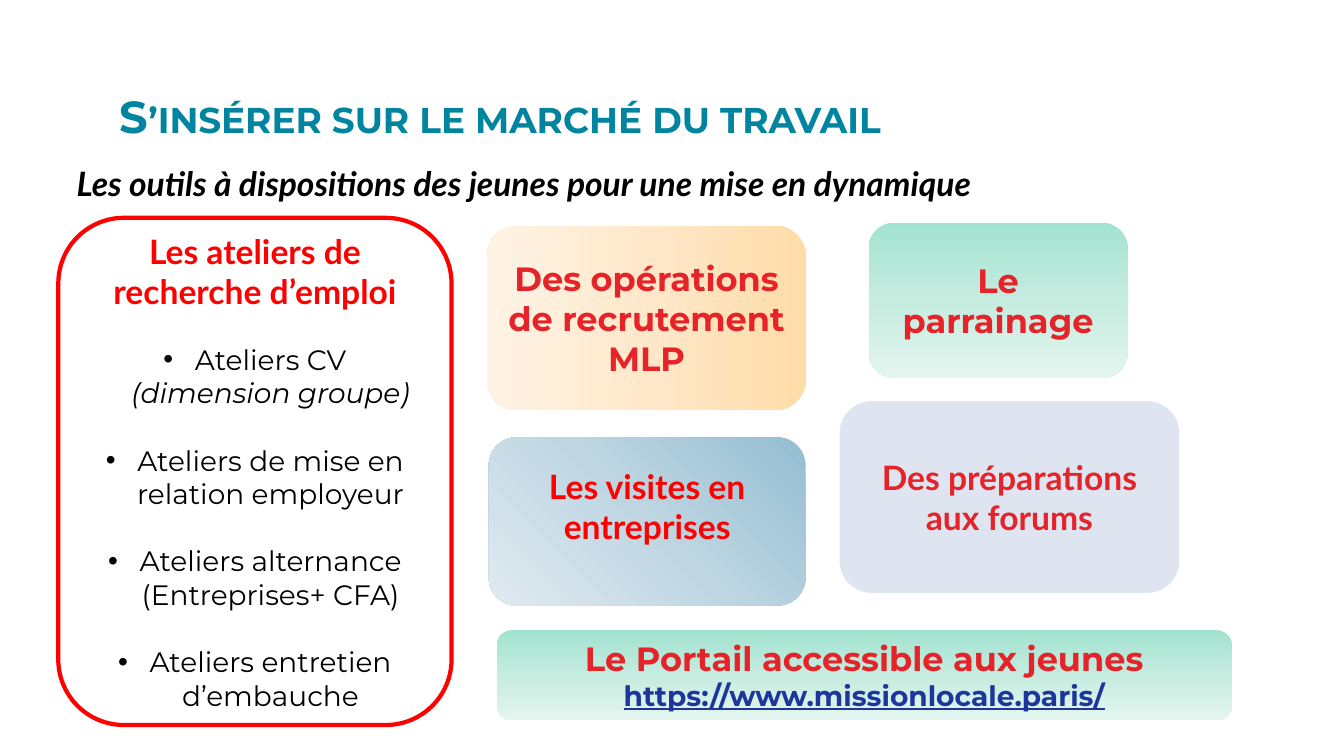
"""Build the slide on tools that help young people enter the job market."""
from copy import deepcopy
from dataclasses import dataclass

from lxml import etree
from pptx import Presentation
from pptx.dml.color import RGBColor
from pptx.enum.shapes import MSO_SHAPE
from pptx.enum.text import MSO_ANCHOR, PP_ALIGN
from pptx.oxml.ns import qn
from pptx.util import Cm, Pt

ROUNDED = MSO_SHAPE.ROUNDED_RECTANGLE
MIDDLE, TOP = MSO_ANCHOR.MIDDLE, MSO_ANCHOR.TOP
CENTER, LEFT = PP_ALIGN.CENTER, PP_ALIGN.LEFT

LATO, MONTSERRAT = "Lato", "Montserrat"
TEAL, CRIMSON, RED, NAVY = "00849F", "E52329", "FF0000", "1C369C"
BLACK, WHITE, PALE_BLUE = "000000", "FFFFFF", "DEE5F0"


@dataclass(frozen=True)
class Run:
    text: str
    size: int = 24
    font: str = MONTSERRAT
    color: str = CRIMSON
    bold: bool = True
    italic: bool = False
    underline: bool = False
    small_caps: bool = False


@dataclass(frozen=True)
class Para:
    runs: tuple[Run, ...]
    before: int = 0
    bullet: bool = False
    spacing: float = 1.0


@dataclass(frozen=True)
class Gradient:
    colors: tuple[str, str, str]
    angle: int


@dataclass(frozen=True)
class Box:
    left: float
    top: float
    width: float
    height: float
    paras: tuple[Para, ...]
    fill: str | Gradient = WHITE
    line: str = ""
    bottom: float = 0.13


def rgb(value: str) -> RGBColor:
    return RGBColor.from_string(value)


def item(*runs: Run, before: int = 24) -> Para:
    return Para(runs, before, bullet=True)


def step(text: str, italic: bool = False) -> Run:
    return Run(text, 20, color=BLACK, bold=False, italic=italic)


def write(tf, paras: tuple[Para, ...], align) -> None:
    tf.word_wrap = True
    for i, para in enumerate(paras):
        p = tf.paragraphs[0] if i == 0 else tf.add_paragraph()
        if para.bullet:
            pPr = p._p.get_or_add_pPr()
            pPr.set("marL", str(Cm(0.79)))
            pPr.set("indent", str(-Cm(0.79)))
            etree.SubElement(pPr, qn("a:buFont")).set("typeface", "Arial")
            etree.SubElement(pPr, qn("a:buChar")).set("char", "•")
        p.alignment = align
        p.line_spacing = para.spacing
        p.space_before = Pt(para.before)
        for run in para.runs:
            r = p.add_run()
            r.text = run.text
            r.font.size = Pt(run.size)
            r.font.name = run.font
            r.font.color.rgb = rgb(run.color)
            r.font.bold = run.bold
            r.font.italic = run.italic
            r.font.underline = run.underline
            if run.small_caps:
                r._r.get_or_add_rPr().set("cap", "small")


def paint(s, fill: str | Gradient) -> None:
    if isinstance(fill, str):
        s.fill.solid()
        s.fill.fore_color.rgb = rgb(fill)
        return
    s.fill.gradient()
    s.fill.gradient_angle = 360 - fill.angle
    stops = s._element.spPr.find(f".//{qn('a:gsLst')}")
    stops.append(deepcopy(stops[1]))
    for i, (stop, color) in enumerate(zip(s.fill.gradient_stops, fill.colors)):
        stop.color.rgb = rgb(color)
        stop.position = i / 2


def add_heading(slide, box: Box) -> None:
    s = slide.shapes.add_textbox(Cm(box.left), Cm(box.top), Cm(box.width), Cm(box.height))
    tf = s.text_frame
    tf.margin_left = tf.margin_right = tf.margin_top = tf.margin_bottom = Cm(0.33)
    tf.vertical_anchor = TOP
    write(tf, box.paras, LEFT)


def add_card(slide, box: Box) -> None:
    s = slide.shapes.add_shape(
        ROUNDED, Cm(box.left), Cm(box.top), Cm(box.width), Cm(box.height))
    s.shadow.inherit = False
    paint(s, box.fill)
    if box.line:
        s.line.color.rgb = rgb(box.line)
        s.line.width = Pt(3)
    else:
        s.line.fill.background()
    tf = s.text_frame
    tf.vertical_anchor = MIDDLE
    tf.margin_bottom = Cm(box.bottom)
    write(tf, box.paras, CENTER)


ORANGE = Gradient(("FFDCA9", "FFE8CA", "FFF3E5"), 180)
GREEN = Gradient(("A2E3D0", "C6ECE0", "E3F5EF"), 90)
BLUE = Gradient(("94BED2", "BFD6E2", "E0EAF0"), 135)

HEADINGS = (
    Box(2.69, 2.06, 23.16, 1.98, (Para((
        Run("S’insérer sur le marché du travail", 32, color=TEAL, small_caps=True),
    ), spacing=0.9),)),
    Box(1.6, 3.78, 30.76, 1.27, (Para((
        Run("Les outils à dispositions des jeunes pour une mise en dynamique",
            font=LATO, color=BLACK, italic=True),
    )),)),
)

CARDS = (
    Box(12.27, 5.69, 8.05, 4.65,
        (Para((Run("Des opérations de recrutement MLP"),)),), ORANGE),
    Box(21.89, 5.61, 6.53, 3.91, (Para((Run("Le parrainage"),)),), GREEN),
    Box(12.32, 11.02, 7.98, 4.24,
        (Para((Run("Les visites en entreprises", font=LATO, color=RED),)),),
        BLUE, bottom=0.89),
    Box(21.16, 10.11, 8.56, 4.83,
        (Para((Run("Des préparations aux forums", font=LATO),)),), PALE_BLUE),
    Box(1.47, 5.49, 9.91, 12.78, (
        Para((Run("Les ateliers de recherche d’emploi", font=LATO, color=RED),)),
        item(step("Ateliers CV "), step("(dimension groupe)", italic=True), before=22),
        item(step("Ateliers de mise en relation employeur")),
        item(step("Ateliers alternance (Entreprises+ CFA)")),
        item(step("Ateliers entretien d’embauche")),
    ), WHITE, RED),
    Box(12.52, 15.88, 18.52, 2.26, (Para((
        Run("Le Portail accessible aux jeunes "),
        Run("https://www.missionlocale.paris/", 20, color=NAVY, underline=True),
    )),), GREEN),
)


def main() -> None:
    prs = Presentation()
    prs.slide_width, prs.slide_height = Cm(33.87), Cm(19.05)
    slide = prs.slides.add_slide(prs.slide_layouts[6])
    for heading in HEADINGS:
        add_heading(slide, heading)
    for card in CARDS:
        add_card(slide, card)
    prs.save("out.pptx")


if __name__ == "__main__":
    main()
